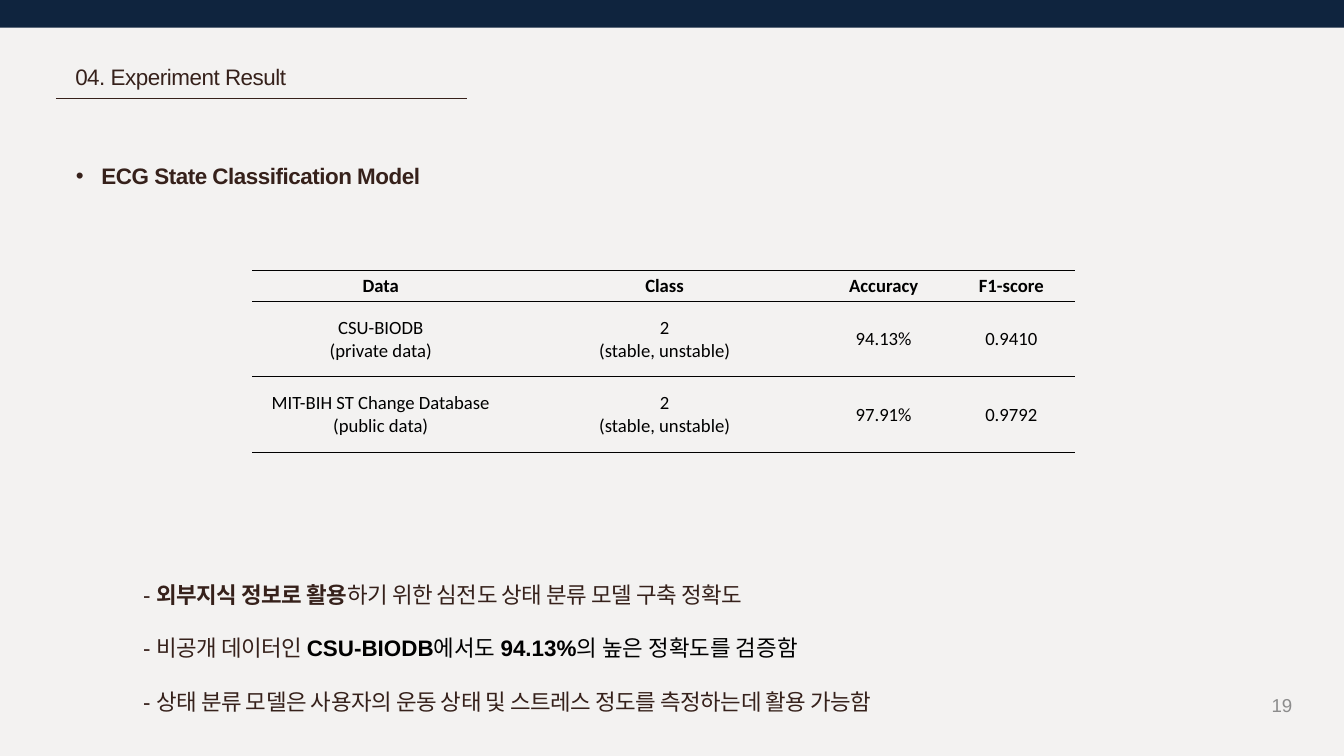
from dataclasses import dataclass

from lxml import etree
from pptx import Presentation
from pptx.dml.color import RGBColor
from pptx.enum import shapes, text
from pptx.oxml import ns
from pptx.util import Inches, Pt

CELL = Inches(0.25)
COLUMNS, ROWS = 80, 45


@dataclass(frozen=True)
class Theme:
    """Colours, fonts and type sizes of the deck."""
    paper: str = "F3F2F1"
    navy: str = "0F243E"
    brown: str = "36211B"
    black: str = "000000"
    grey: str = "8C8C8C"
    body_font: str = "Arial"
    table_font: str = "Calibri"
    body_size: int = 24
    small_size: int = 20
    tracking: float = -0.5
    thick: float = 1.5
    thin: float = 1
    hairline: float = 0.75


@dataclass(frozen=True)
class Box:
    """A rectangle in grid columns and rows."""
    left: float
    top: float
    width: float
    height: float

    def place(self):
        """Return left, top, width and height as slide lengths."""
        return [round(n * CELL) for n in (self.left, self.top, self.width, self.height)]


THEME = Theme()
HEADINGS = ["Data", "Class", "Accuracy", "F1-score"]
RESULTS = [
    ["CSU-BIODB\n(private data)", "2\n(stable, unstable)", "94.13%", "0.9410"],
    ["MIT-BIH ST Change Database\n(public data)", "2\n(stable, unstable)", "97.91%", "0.9792"],
]
COLUMN_WEIGHTS = [3.83, 4.62, 1.9, 1.9]
ROW_WEIGHTS = [0.46, 1.11, 1.13]
FINDINGS = [
    [("- ", False, True), ("외부지식 정보로 활용", True, True),
     ("하기 위한 심전도 상태 분류 모델 구축 정확도", False, True)],
    [("- 비공개 데이터인 ", False, True), ("CSU-BIODB", True, False), ("에서도 ", False, False),
     ("94.13%", True, False), ("의 높은 정확도를 검증함", False, False)],
    [("- 상태 분류 모델은 사용자의 운동 상태 및 스트레스 정도를 측정하는데 활용 가능함", False, True)],
]


def color(name):
    """Turn a hex string into a colour."""
    return RGBColor.from_string(name)


def add_span(para, words, size, ink, font=THEME.body_font, bold=False, tracking=0):
    """Add one styled run to a paragraph."""
    span = para.add_run()
    span.text = words
    span.font.size = Pt(size)
    span.font.name = font
    span.font.bold = bold
    span.font.color.rgb = color(ink)
    if tracking:
        span._r.get_or_add_rPr().set("spc", str(round(tracking * 100)))


def add_frame(page, box, inset=0):
    """Add a wrapping text box and return its text frame."""
    frame = page.shapes.add_textbox(*box.place()).text_frame
    frame.word_wrap = True
    frame.margin_left = frame.margin_right = Inches(inset)
    frame.margin_top = frame.margin_bottom = Inches(inset / 2)
    return frame


def set_indent(para, margin, hanging=0, bullet=None):
    """Set a paragraph's left margin, hanging indent and bullet."""
    props = para._p.get_or_add_pPr()
    props.set("marL", str(Inches(margin)))
    props.set("indent", str(-Inches(hanging)))
    if bullet:
        etree.SubElement(props, ns.qn("a:buFont"), typeface=THEME.body_font)
        etree.SubElement(props, ns.qn("a:buChar"), char=bullet)


def set_borders(cell, top, bottom):
    """Rule a cell above and below and leave its sides open."""
    props = cell._tc.get_or_add_tcPr()
    for index, (side, weight) in enumerate(zip("LRTB", (0, 0, top, bottom))):
        line = etree.Element(ns.qn(f"a:ln{side}"), w=str(Pt(weight)))
        if weight:
            fill = etree.SubElement(line, ns.qn("a:solidFill"))
            etree.SubElement(fill, ns.qn("a:srgbClr"), val=THEME.black)
        else:
            etree.SubElement(line, ns.qn("a:noFill"))
        props.insert(index, line)


def add_top_bar(page, box):
    """Draw the band across the top edge."""
    bar = page.shapes.add_shape(shapes.MSO_SHAPE.RECTANGLE, *box.place())
    bar.shadow.inherit = False
    bar.fill.solid()
    bar.fill.fore_color.rgb = color(THEME.navy)
    bar.line.fill.background()


def add_page_number(page, box, number):
    """Write the page number at the right of its box."""
    frame = add_frame(page, box, inset=0.1)
    frame.vertical_anchor = text.MSO_ANCHOR.MIDDLE
    para = frame.paragraphs[0]
    para.alignment = text.PP_ALIGN.RIGHT
    add_span(para, number, THEME.small_size, THEME.grey)


def add_section_title(page, box, words):
    """Write the section title above its rule."""
    left, top, width, height = box.place()
    rule = page.shapes.add_connector(
        shapes.MSO_CONNECTOR.STRAIGHT, left, top + height, left + width, top + height)
    rule.line.color.rgb = color(THEME.brown)
    rule.line.width = Pt(THEME.hairline)
    etree.SubElement(rule._element.spPr, ns.qn("a:effectLst"))
    frame = add_frame(page, Box(box.left + 1.16, box.top, 14.48, 1.72))
    para = frame.paragraphs[0]
    para.line_spacing = Pt(1.4 * THEME.body_size)
    add_span(para, words, THEME.body_size, THEME.brown, tracking=THEME.tracking)


def add_notes(page, box, heading, findings):
    """Write the heading and, below the table's gap, the findings."""
    frame = add_frame(page, box)
    para = frame.paragraphs[0]
    para.line_spacing = 1.5
    set_indent(para, 0.38, 0.38, "•")
    add_span(para, heading, THEME.body_size, THEME.brown, bold=True, tracking=THEME.tracking)
    for index, finding in enumerate(findings):
        para = frame.add_paragraph()
        para.line_spacing = 2.0
        para.space_before = Pt(0 if index else 391)
        set_indent(para, 1)
        for words, bold, tinted in finding:
            add_span(para, words, THEME.body_size, THEME.brown if tinted else THEME.black,
                     bold=bold, tracking=THEME.tracking if tinted else 0)


def add_results_table(page, box, rows):
    """Lay out the ruled table of scores."""
    left, top, width, height = box.place()
    table = page.shapes.add_table(
        len(rows), len(rows[0]), left, top, width, height).table
    table.first_row = table.horz_banding = False
    for column, weight in zip(table.columns, COLUMN_WEIGHTS):
        column.width = round(width * weight / sum(COLUMN_WEIGHTS))
    for row, weight in zip(table.rows, ROW_WEIGHTS):
        row.height = round(height * weight / sum(ROW_WEIGHTS))
    rules = [THEME.thick] + [THEME.thin] * (len(rows) - 1) + [THEME.thick]
    for r, values in enumerate(rows):
        for c, value in enumerate(values):
            cell = table.cell(r, c)
            cell.vertical_anchor = text.MSO_ANCHOR.MIDDLE
            cell.fill.solid()
            cell.fill.fore_color.rgb = color(THEME.paper)
            set_borders(cell, rules[r], rules[r + 1])
            for index, words in enumerate(value.split("\n")):
                frame = cell.text_frame
                para = frame.add_paragraph() if index else frame.paragraphs[0]
                para.alignment = text.PP_ALIGN.CENTER
                add_span(para, words, THEME.small_size, THEME.black,
                         THEME.table_font, bold=r == 0)


def main():
    """Build the experiment result page and save the deck."""
    deck = Presentation()
    deck.slide_width, deck.slide_height = COLUMNS * CELL, ROWS * CELL
    page = deck.slides.add_slide(deck.slide_layouts[6])
    page.background.fill.solid()
    page.background.fill.fore_color.rgb = color(THEME.paper)
    add_top_bar(page, Box(0, 0, COLUMNS, 1.64))
    add_page_number(page, Box(68, 41.16, 9.32, 1.6), "19")
    add_notes(page, Box(4.52, 8.84, 70.84, 33.4), "ECG State Classification Model", FINDINGS)
    add_results_table(page, Box(15, 16.12, 49, 10.84), [HEADINGS] + RESULTS)
    add_section_title(page, Box(3.32, 3.48, 24.48, 2.36), "04. Experiment Result")
    deck.save("out.pptx")


if __name__ == "__main__":
    main()
